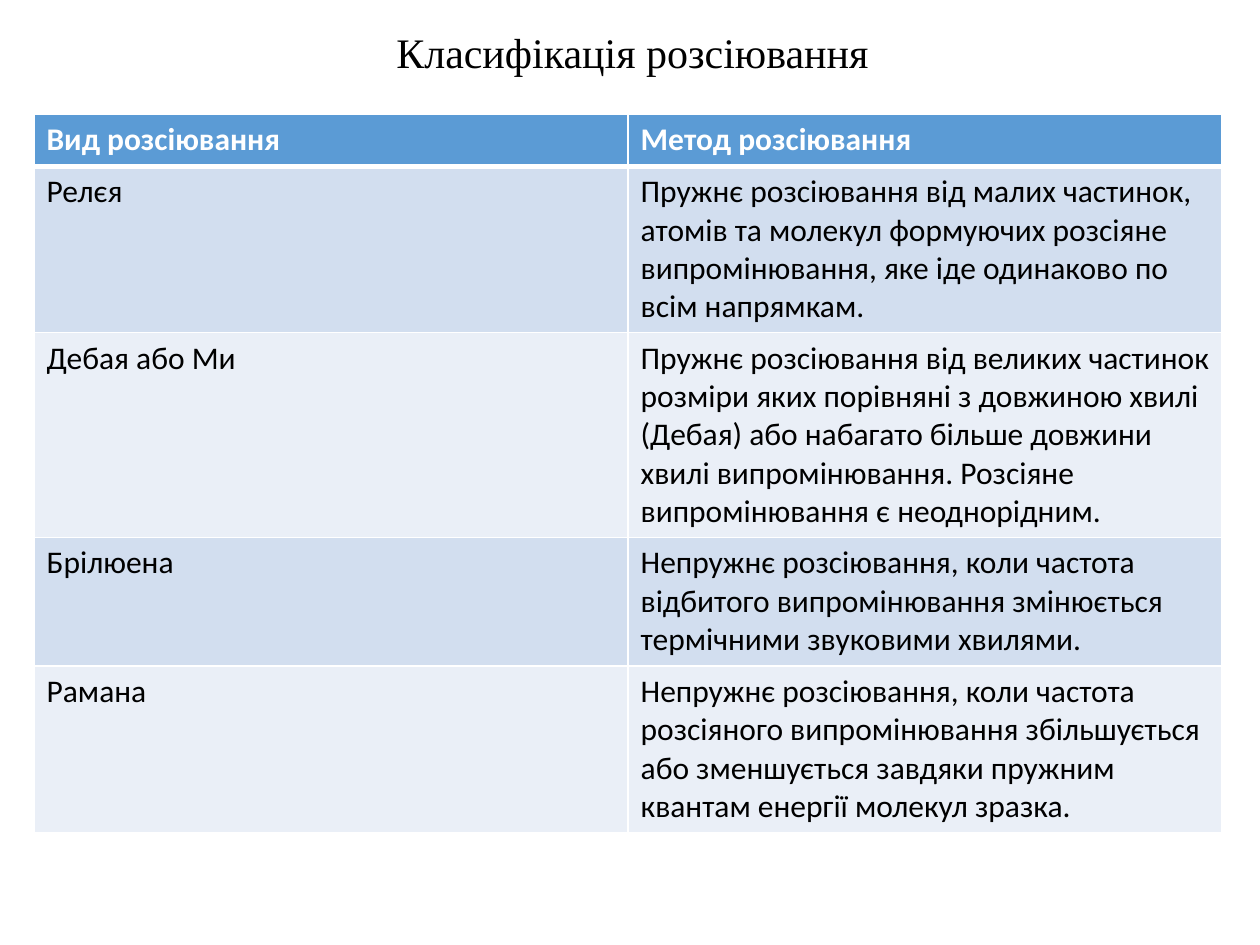
from dataclasses import dataclass

from lxml.etree import SubElement
from pptx import Presentation
from pptx.dml.color import RGBColor
from pptx.enum.text import MSO_AUTO_SIZE, PP_ALIGN
from pptx.oxml.ns import qn
from pptx.util import Inches, Pt


@dataclass(frozen=True)
class Theme:
    title_font: str = "Times New Roman"
    body_font: str = "Calibri"
    title_size: int = 24
    body_size: int = 18
    text: str = "000000"
    white: str = "FFFFFF"
    header: str = "5B9BD5"
    bands: tuple = ("D2DEEF", "EAEFF7")
    thin: int = 1
    thick: int = 3


@dataclass(frozen=True)
class Scattering:
    kind: str
    method: str
    height: float


THEME = Theme()
HEADER = Scattering("Вид розсіювання", "Метод розсіювання", 0.41)
ROWS = [
    Scattering("Релєя", "Пружнє розсіювання від малих частинок, атомів та молекул "
               "формуючих розсіяне випромінювання, яке іде одинаково по всім напрямкам.", 1.32),
    Scattering("Дебая або Ми", "Пружнє розсіювання від великих частинок розміри яких "
               "порівняні з довжиною хвилі (Дебая) або набагато більше довжини хвилі "
               "випромінювання. Розсіяне випромінювання є неоднорідним.", 1.62),
    Scattering("Брілюена", "Непружнє розсіювання, коли частота відбитого "
               "випромінювання змінюється термічними звуковими хвилями.", 1.02),
    Scattering("Рамана", "Непружнє розсіювання, коли частота розсіяного випромінювання "
               "збільшується або зменшується завдяки пружним квантам енергії молекул зразка.", 1.32),
]


def add_span(para, text: str, font: str, size: int, color: str, bold: bool = False) -> None:
    span = para.add_run()
    span.text = text
    span.font.name = font
    span.font.size = Pt(size)
    span.font.bold = bold
    span.font.color.rgb = RGBColor.from_string(color)


def set_borders(cell, top: int, bottom: int) -> None:
    properties = cell._tc.get_or_add_tcPr()
    widths = {"L": THEME.thin, "R": THEME.thin, "T": top, "B": bottom}
    for side, width in widths.items():
        line = SubElement(properties, qn(f"a:ln{side}"), w=str(Pt(width)))
        fill = SubElement(line, qn("a:solidFill"))
        SubElement(fill, qn("a:srgbClr"), val=THEME.white)


def add_title(page, text: str) -> None:
    box = page.shapes.add_textbox(Inches(0.58), Inches(0.16), Inches(8.88), Inches(0.5))
    frame = box.text_frame
    frame.word_wrap = True
    frame.auto_size = MSO_AUTO_SIZE.SHAPE_TO_FIT_TEXT
    para = frame.paragraphs[0]
    para.alignment = PP_ALIGN.CENTER
    add_span(para, text, THEME.title_font, THEME.title_size, THEME.text)


def add_scattering_table(page, entries: list[Scattering]) -> None:
    total = sum(entry.height for entry in entries)
    table = page.shapes.add_table(len(entries), 2, Inches(0.27), Inches(0.91),
                                  Inches(9.43), Inches(total)).table
    for index, entry in enumerate(entries):
        table.rows[index].height = Inches(entry.height)
        is_header = index == 0
        fill = THEME.header if is_header else THEME.bands[(index - 1) % 2]
        color = THEME.white if is_header else THEME.text
        top = THEME.thick if index == 1 else THEME.thin
        bottom = THEME.thick if is_header else THEME.thin
        for column, text in enumerate((entry.kind, entry.method)):
            cell = table.cell(index, column)
            set_borders(cell, top, bottom)
            cell.fill.solid()
            cell.fill.fore_color.rgb = RGBColor.from_string(fill)
            add_span(cell.text_frame.paragraphs[0], text, THEME.body_font,
                     THEME.body_size, color, is_header)


def main() -> None:
    deck = Presentation()
    deck.slide_width, deck.slide_height = Inches(10), Inches(7.5)
    page = deck.slides.add_slide(deck.slide_layouts[6])

    # Classification table
    add_scattering_table(page, [HEADER, *ROWS])

    # Title
    add_title(page, "Класифікація розсіювання")

    deck.save("out.pptx")


if __name__ == "__main__":
    main()
